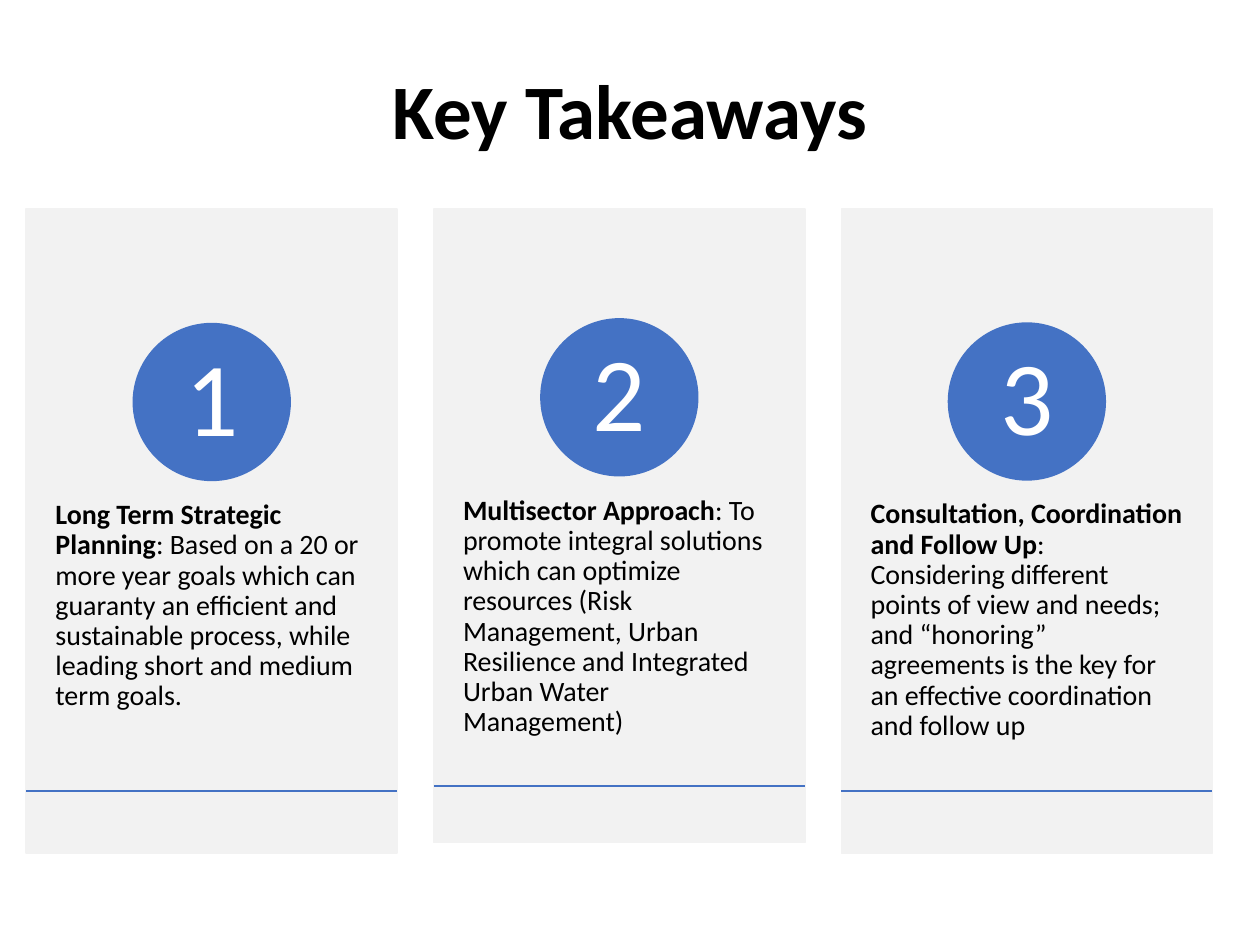
from lxml.etree import SubElement
from pptx import Presentation
from pptx.dml.color import RGBColor
from pptx.enum.shapes import MSO_CONNECTOR, MSO_SHAPE
from pptx.enum.text import MSO_ANCHOR, PP_ALIGN
from pptx.oxml.ns import qn
from pptx.util import Pt

BLACK = RGBColor(0x00, 0x00, 0x00)
WHITE = RGBColor(0xFF, 0xFF, 0xFF)
BLUE = RGBColor(0x44, 0x72, 0xC4)
LIGHT_GRAY = RGBColor(0xF2, 0xF2, 0xF2)

CARD_LEFT, CARD_TOP, CARD_WIDTH, CARD_PITCH = 15, 119.5, 212, 232.9
CIRCLE_SIZE = 89.5

TAKEAWAYS = [
    ("Long Term Strategic Planning",
     ": Based on a 20 or more year goals which can guaranty an efficient and "
     "sustainable process, while leading short and medium term goals.",
     368, 185, 260, 452),
    ("Multisector Approach",
     ": To promote integral solutions which can optimize resources (Risk "
     "Management, Urban Resilience and Integrated Urban Water Management)",
     362, 182.3, 257.5, 449),
    ("Consultation, Coordination and Follow Up",
     ": Considering different points of view and needs; and “honoring” "
     "agreements is the key for an effective coordination and follow up",
     368, 184.7, 259.5, 452),
]


def format_run(run, size, color, bold=False):
    run.font.name = "Calibri"
    run.font.size = Pt(size)
    run.font.bold = bold
    run.font.color.rgb = color


def add_filled_shape(slide, kind, left, top, width, height, color):
    shape = slide.shapes.add_shape(kind, Pt(left), Pt(top), Pt(width), Pt(height))
    shape.shadow.inherit = False
    shape.fill.solid()
    shape.fill.fore_color.rgb = color
    shape.line.color.rgb = color
    shape.line.width = Pt(1)
    return shape


def add_text_box(slide, left, top, width, height, margins, runs, size):
    text_box = slide.shapes.add_textbox(Pt(left), Pt(top), Pt(width), Pt(height))
    text_frame = text_box.text_frame
    text_frame.word_wrap = True
    text_frame.margin_left = text_frame.margin_right = Pt(margins[0])
    text_frame.margin_top = text_frame.margin_bottom = Pt(margins[1])
    paragraph = text_frame.paragraphs[0]
    paragraph.line_spacing = 0.9
    for text, bold in runs:
        run = paragraph.add_run()
        run.text = text
        format_run(run, size, BLACK, bold)
    return text_frame


def add_title(slide, text):
    text_frame = add_text_box(slide, 49.5, 29, 621, 72.5, (7.2, 3.6), [(text, True)], 44)
    text_frame.vertical_anchor = MSO_ANCHOR.MIDDLE
    text_frame.paragraphs[0].alignment = PP_ALIGN.CENTER


def add_number_circle(slide, left, top, number):
    circle = add_filled_shape(slide, MSO_SHAPE.OVAL, left, top,
                              CIRCLE_SIZE, CIRCLE_SIZE, BLUE)
    text_frame = circle.text_frame
    text_frame.text = str(number)
    text_frame.word_wrap = False
    text_frame.vertical_anchor = MSO_ANCHOR.MIDDLE
    text_frame.margin_top = text_frame.margin_bottom = Pt(0.8)
    paragraph = text_frame.paragraphs[0]
    paragraph.alignment = PP_ALIGN.CENTER
    paragraph.line_spacing = 0.9
    format_run(paragraph.runs[0], 60, WHITE)


def add_rule(slide, left, top, width):
    connector = slide.shapes.add_connector(
        MSO_CONNECTOR.STRAIGHT, Pt(left), Pt(top), Pt(left + width), Pt(top))
    connector.line.color.rgb = BLUE
    connector.line.width = Pt(1)
    SubElement(connector._element.spPr, qn("a:effectLst"))


def add_card(slide, index, heading, body, height, circle_top, text_top, rule_top):
    left = CARD_LEFT + index * CARD_PITCH
    add_filled_shape(slide, MSO_SHAPE.RECTANGLE, left, CARD_TOP,
                     CARD_WIDTH, height, LIGHT_GRAY)
    add_text_box(slide, left, text_top, CARD_WIDTH, height * 0.6, (16.7, 26),
                 [(heading, True), (body, False)], 16)
    add_number_circle(slide, left + (CARD_WIDTH - CIRCLE_SIZE) / 2, circle_top, index + 1)
    add_rule(slide, left, rule_top, CARD_WIDTH)


def main():
    """Build the key takeaways slide with three numbered cards."""
    presentation = Presentation()
    presentation.slide_width = Pt(720)
    presentation.slide_height = Pt(540)
    slide = presentation.slides.add_slide(presentation.slide_layouts[6])
    add_title(slide, "Key Takeaways")
    for index, takeaway in enumerate(TAKEAWAYS):
        add_card(slide, index, *takeaway)
    presentation.save("out.pptx")


if __name__ == "__main__":
    main()
